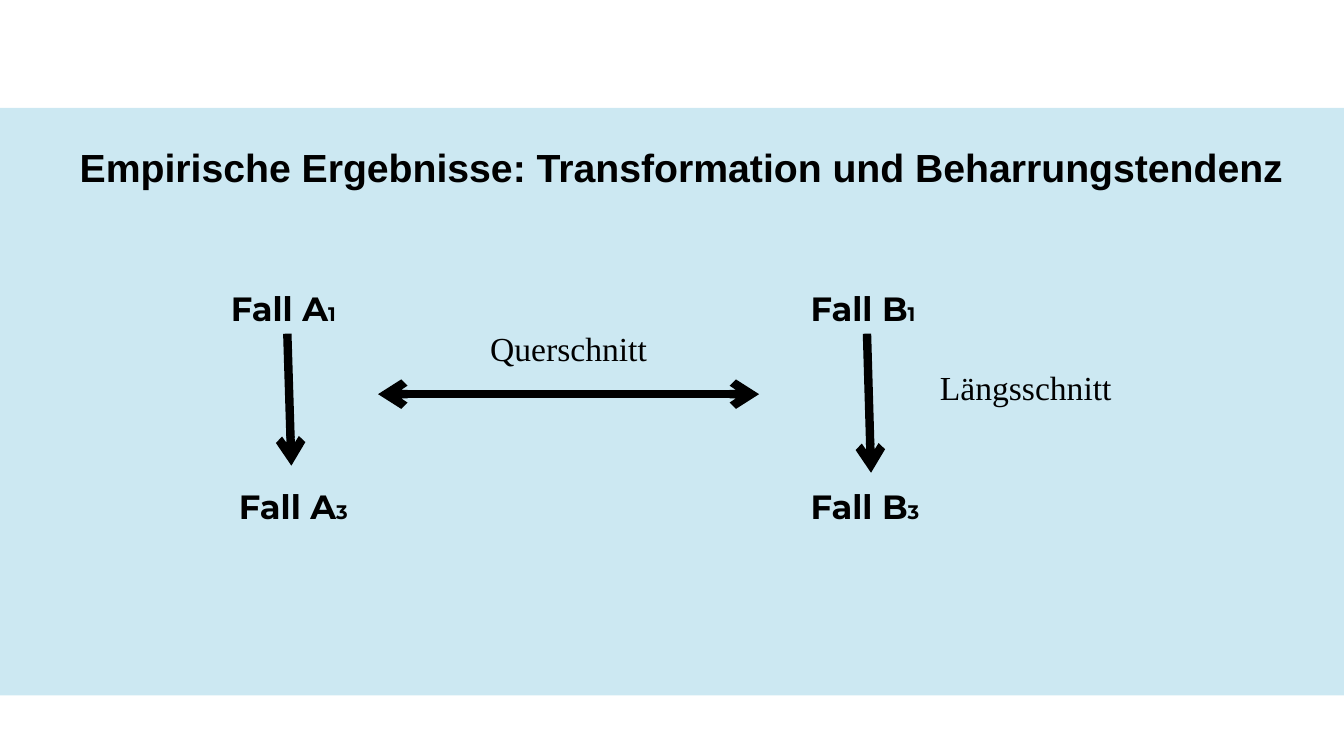
from lxml.etree import SubElement
from pptx import Presentation
from pptx.dml.color import RGBColor
from pptx.enum.shapes import MSO_CONNECTOR, MSO_SHAPE
from pptx.enum.text import MSO_ANCHOR, PP_ALIGN
from pptx.oxml.ns import qn
from pptx.util import Inches, Pt

WIDE, HIGH = Inches(13.33), Inches(7.5)
COL, ROW = WIDE / 100, HIGH / 100  # grid of 100 columns by 100 rows
BLACK, BLUE = "000000", "008FBE"

HEAD = dict(name="Arial", size=Pt(28), bold=True)
CASE = dict(name="Montserrat", size=Pt(24), bold=True)
INDEX = dict(CASE, size=Pt(14))
NOTE = dict(name="Times New Roman", size=Pt(24), bold=False)


def paint(target, color):
    target.rgb = RGBColor.from_string(color)


def place(x, y, w, h):
    return [round(n) for n in (x * COL, y * ROW, w * COL, h * ROW)]


def style(font, form):
    for key, value in form.items():
        setattr(font, key, value)
    paint(font.color, BLACK)


def write(frame, runs, align=PP_ALIGN.LEFT):
    frame.word_wrap = True
    frame.vertical_anchor = MSO_ANCHOR.TOP
    par = frame.paragraphs[0]
    par.alignment = align
    for text, form in runs:
        run = par.add_run()
        run.text = text
        style(run.font, form)
    return par


def label(slide, box, runs, align=PP_ALIGN.LEFT, inset=0.1):
    frame = slide.shapes.add_textbox(*place(*box)).text_frame
    frame.margin_left = Inches(inset)
    write(frame, runs, align)


def arrow(slide, start, end, both=False):
    line = slide.shapes.add_connector(
        MSO_CONNECTOR.STRAIGHT, *place(*start, *end))
    line.line.width = Pt(6)
    paint_line = line.line.fill
    paint_line.solid()
    paint(paint_line.fore_color, BLACK)
    edge = line.line._get_or_add_ln()
    for tag in ["a:headEnd"] * both + ["a:tailEnd"]:
        SubElement(edge, qn(tag), type="arrow")
    SubElement(line._element.spPr, qn("a:effectLst"))


# Tinted band behind everything
def panel(slide, box):
    band = slide.shapes.add_shape(MSO_SHAPE.RECTANGLE, *place(*box))
    band.shadow.inherit = False
    band.line.fill.background()
    band.fill.solid()
    paint(band.fill.fore_color, BLUE)
    tint = band._element.spPr.find(qn("a:solidFill"))[0]
    SubElement(tint, qn("a:alpha"), val="20000")
    slide.shapes._spTree.insert(2, band._element)


# Heading in the title placeholder
def title(slide, box, text):
    head = slide.shapes.title
    head.left, head.top, head.width, head.height = place(*box)
    frame = head.text_frame
    for side in ("left", "top", "right", "bottom"):
        setattr(frame, f"margin_{side}", 0)
    write(frame, [(text, HEAD)]).line_spacing = 1.1


# One case: first and third stage, joined by a downward arrow
def case(slide, x, y, name, shift, drop):
    for stage, dx, dy, h in (("1", 0, 0, 6.67), ("3", shift, 26.13, 12.13)):
        label(slide, (x + dx, y + dy, 11.25, h),
              [(f"Fall {name}", CASE), (stage, INDEX)], inset=0.19)
    arrow(slide, (x + 5.63, y + 6.67), (x + 5.93, y + drop))


# Two cases side by side, with the two directions of comparison
def scheme(slide, x, y):
    arrow(slide, (x + 12.38, y + 14.67), (x + 40.73, y + 14.67), both=True)
    case(slide, x, y, "A", 0.6, 24.13)
    case(slide, x + 43.13, y, "B", 0, 25.07)
    for text, dx, dy, w in (("Querschnitt", 17.1, 5.2, 18.9),
                            ("Längsschnitt", 52.58, 10.4, 15.98)):
        label(slide, (x + dx, y + dy, w, 6.67), [(text, NOTE)],
              PP_ALIGN.CENTER)


def main():
    deck = Presentation()
    deck.slide_width, deck.slide_height = WIDE, HIGH
    slide = deck.slides.add_slide(deck.slide_layouts[5])
    panel(slide, (0, 14.27, 100, 77.73))
    title(slide, (5.93, 18.4, 89.8, 10.53),
          "Empirische Ergebnisse: Transformation und Beharrungstendenz")
    scheme(slide, 15.75, 37.47)
    deck.save("out.pptx")


if __name__ == "__main__":
    main()
